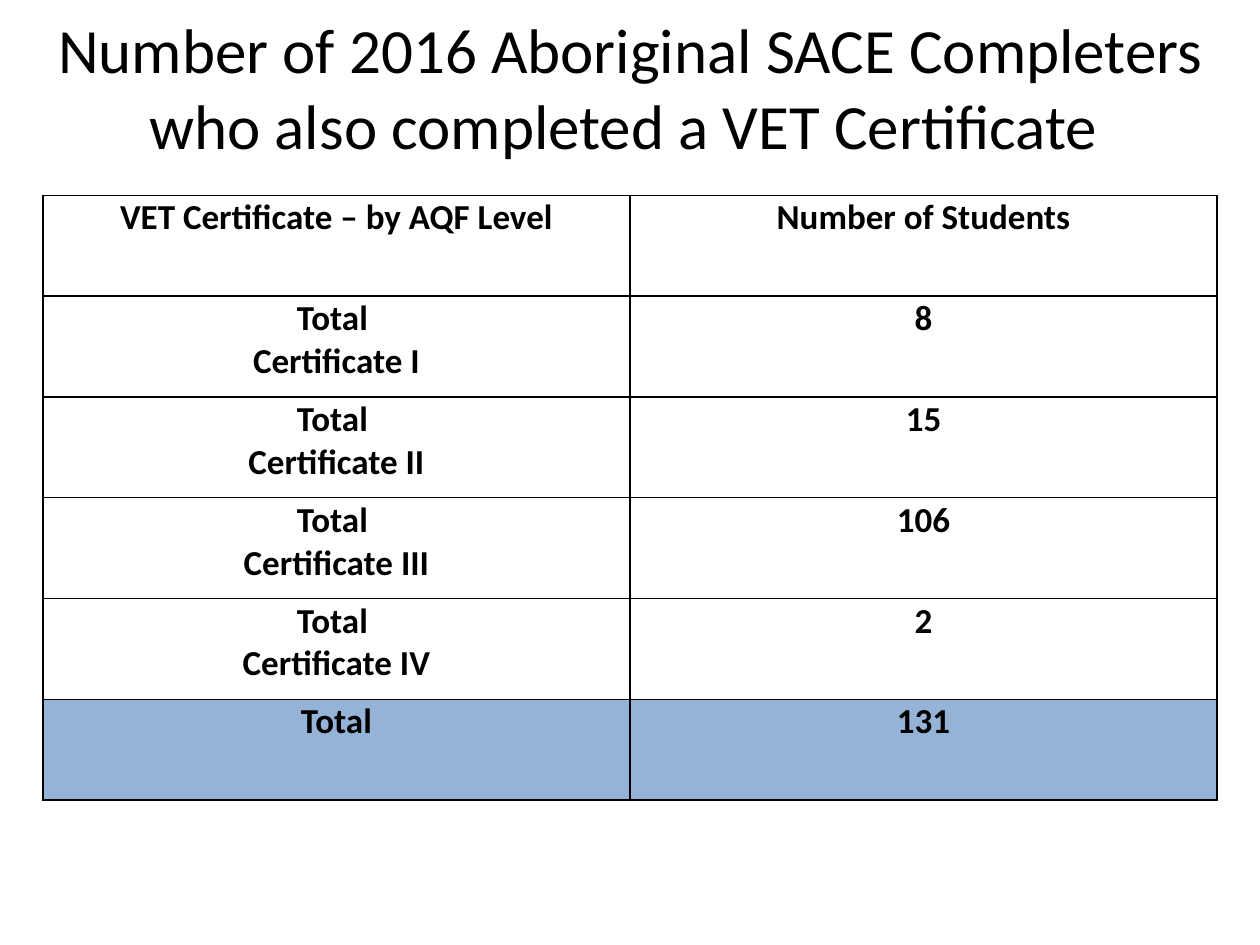
from lxml import etree
from pptx import Presentation
from pptx.dml.color import RGBColor
from pptx.enum.text import MSO_ANCHOR, PP_ALIGN
from pptx.oxml.ns import qn
from pptx.util import Inches, Pt

COLORS = {"text": "000000", "border": "000000", "plain": "FFFFFF", "total": "95B3D7"}
FONT = "Calibri"


def style_paragraph(p, size, bold=False):
    p.alignment = PP_ALIGN.CENTER
    p.font.name = FONT
    p.font.size = Pt(size)
    p.font.bold = bold
    p.font.color.rgb = RGBColor.from_string(COLORS["text"])


def add_borders(cell):
    tc_pr = cell._tc.get_or_add_tcPr()
    for side in ("lnL", "lnR", "lnT", "lnB"):
        ln = etree.SubElement(tc_pr, qn(f"a:{side}"), w=str(Pt(1)))
        fill = etree.SubElement(ln, qn("a:solidFill"))
        etree.SubElement(fill, qn("a:srgbClr"), val=COLORS["border"])


prs = Presentation()
prs.slide_width, prs.slide_height = Inches(10), Inches(7.5)
s = prs.slides.add_slide(prs.slide_layouts[6])

# Title
sp = s.shapes.add_textbox(Inches(0.16), Inches(0.06), Inches(9.69), Inches(1.25))
tf = sp.text_frame
tf.word_wrap = True
tf.vertical_anchor = MSO_ANCHOR.MIDDLE
p = tf.paragraphs[0]
p.text = "Number of 2016 Aboriginal SACE Completers who also completed a VET Certificate "
style_paragraph(p, 36)

# Certificate table
levels = [("I", 8), ("II", 15), ("III", 106), ("IV", 2)]
rows = [("VET Certificate – by AQF Level", "Number of Students")]
rows += [(f"Total \nCertificate {level}", str(count)) for level, count in levels]
rows.append(("Total", str(sum(count for _, count in levels))))

table = s.shapes.add_table(len(rows), 2, Inches(0.34), Inches(1.55),
                           Inches(9.32), Inches(4.8)).table
for r, row in enumerate(rows):
    fill_color = COLORS["total" if r == len(rows) - 1 else "plain"]
    for c, text in enumerate(row):
        cell = table.cell(r, c)
        cell.margin_left = cell.margin_right = cell.margin_top = Inches(0.01)
        cell.margin_bottom = 0
        add_borders(cell)
        cell.fill.solid()
        cell.fill.fore_color.rgb = RGBColor.from_string(fill_color)
        cell.text = text
        for p in cell.text_frame.paragraphs:
            style_paragraph(p, 20, bold=True)

prs.save("out.pptx")
